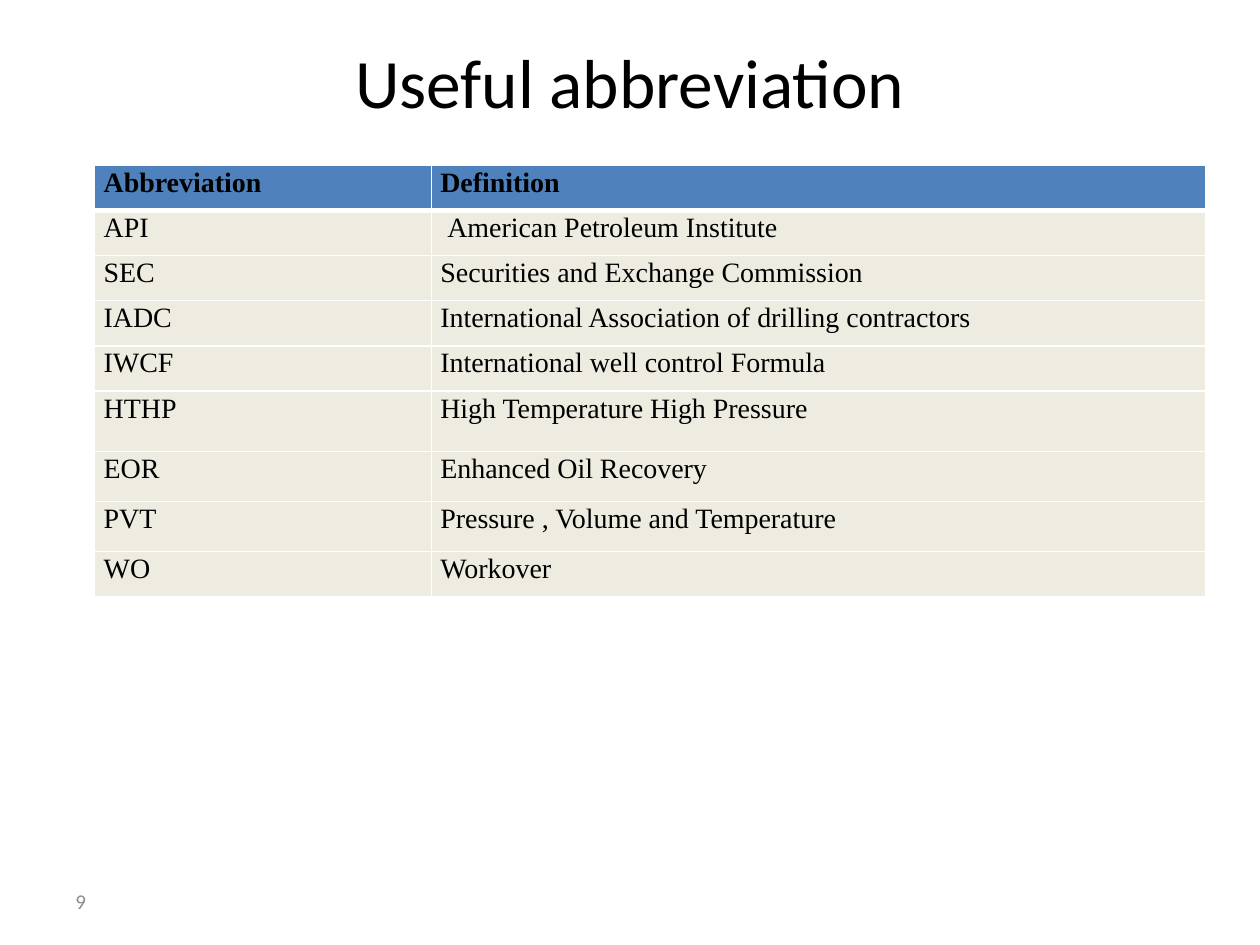
from lxml import etree
from pptx import Presentation
from pptx import util as u
from pptx.dml.color import RGBColor
from pptx.enum import text
from pptx.oxml import ns

COLORS = {"ink": "000000", "header": "4F81BD", "body": "EEECE1",
          "border": "FFFFFF", "number": "8C8C8C"}

HEADINGS = ("Abbreviation", "Definition")
ABBREVIATIONS = [
    ("API", "American Petroleum Institute"),
    ("SEC", "Securities and Exchange Commission"),
    ("IADC", "International Association of drilling contractors"),
    ("IWCF", "International well control Formula"),
    ("HTHP", "High Temperature High Pressure"),
    ("EOR", "Enhanced Oil Recovery"),
    ("PVT", "Pressure , Volume and Temperature"),
    ("WO", "Workover"),
]
ROW_HEIGHT = 0.91
TALL_ROWS = {"HTHP": 1.22, "EOR": 1.01, "PVT": 1.01}
FIRST_COLUMN_SHARE = 0.303
CELL_MARGIN = 0.18
INDENTED = {"American Petroleum Institute": 0.14}


def add_run(paragraph, words, size, font, color, bold=False):
    run = paragraph.add_run()
    run.text = words
    run.font.size = u.Pt(size)
    run.font.name = font
    run.font.bold = bold
    run.font.color.rgb = RGBColor.from_string(COLORS[color])


def add_label(slide, box, words, size, color, alignment):
    """Place one line of text, centred vertically in its box."""
    shape = slide.shapes.add_textbox(*(u.Cm(length) for length in box))
    frame = shape.text_frame
    frame.word_wrap = True
    frame.vertical_anchor = text.MSO_ANCHOR.MIDDLE
    paragraph = frame.paragraphs[0]
    paragraph.alignment = alignment
    add_run(paragraph, words, size, "Calibri", color)


def set_borders(cell, widths):
    """Draw the cell's sides; widths maps a:lnX tags to points."""
    properties = cell._tc.get_or_add_tcPr()
    for position, (tag, width) in enumerate(widths.items()):
        line = etree.Element(ns.qn(tag), w=str(u.Pt(width)))
        fill = etree.SubElement(line, ns.qn("a:solidFill"))
        etree.SubElement(fill, ns.qn("a:srgbClr"), val=COLORS["border"])
        properties.insert(position, line)


def fill_cell(cell, words, row):
    is_header = row == 0
    cell.margin_left = u.Cm(CELL_MARGIN + INDENTED.get(words, 0))
    cell.margin_right = u.Cm(CELL_MARGIN)
    cell.margin_top = cell.margin_bottom = 0
    cell.fill.solid()
    cell.fill.fore_color.rgb = RGBColor.from_string(
        COLORS["header" if is_header else "body"])
    set_borders(cell, {"a:lnL": 1, "a:lnR": 1,
                       "a:lnT": 3 if row == 1 else 1,
                       "a:lnB": 3 if is_header else 1})
    paragraph = cell.text_frame.paragraphs[0]
    paragraph.alignment = text.PP_ALIGN.LEFT
    paragraph.line_spacing = 1.07
    add_run(paragraph, words, 16, "Times New Roman", "ink", bold=is_header)


def add_abbreviation_table(slide, left, top, width):
    rows = [HEADINGS, *ABBREVIATIONS]
    heights = [TALL_ROWS.get(short, ROW_HEIGHT) for short, _ in rows]
    table = slide.shapes.add_table(
        len(rows), len(HEADINGS), u.Cm(left), u.Cm(top),
        u.Cm(width), u.Cm(sum(heights))).table
    for column, share in zip(table.columns,
                             (FIRST_COLUMN_SHARE, 1 - FIRST_COLUMN_SHARE)):
        column.width = u.Cm(width * share)
    for row, (entry, height) in enumerate(zip(rows, heights)):
        table.rows[row].height = u.Cm(height)
        for column, words in enumerate(entry):
            fill_cell(table.cell(row, column), words, row)


def main():
    presentation = Presentation()
    presentation.slide_width = u.Cm(25.4)
    presentation.slide_height = u.Cm(19.05)
    slide = presentation.slides.add_slide(presentation.slide_layouts[6])
    add_label(slide, (1.27, 0.76, 22.86, 1.75), "Useful abbreviation",
              39.6, "ink", text.PP_ALIGN.CENTER)
    add_abbreviation_table(slide, 1.91, 3.33, 22.4)
    add_label(slide, (1.27, 17.65, 5.92, 1.02), "9",
              12, "number", text.PP_ALIGN.LEFT)
    presentation.save("out.pptx")


if __name__ == "__main__":
    main()
